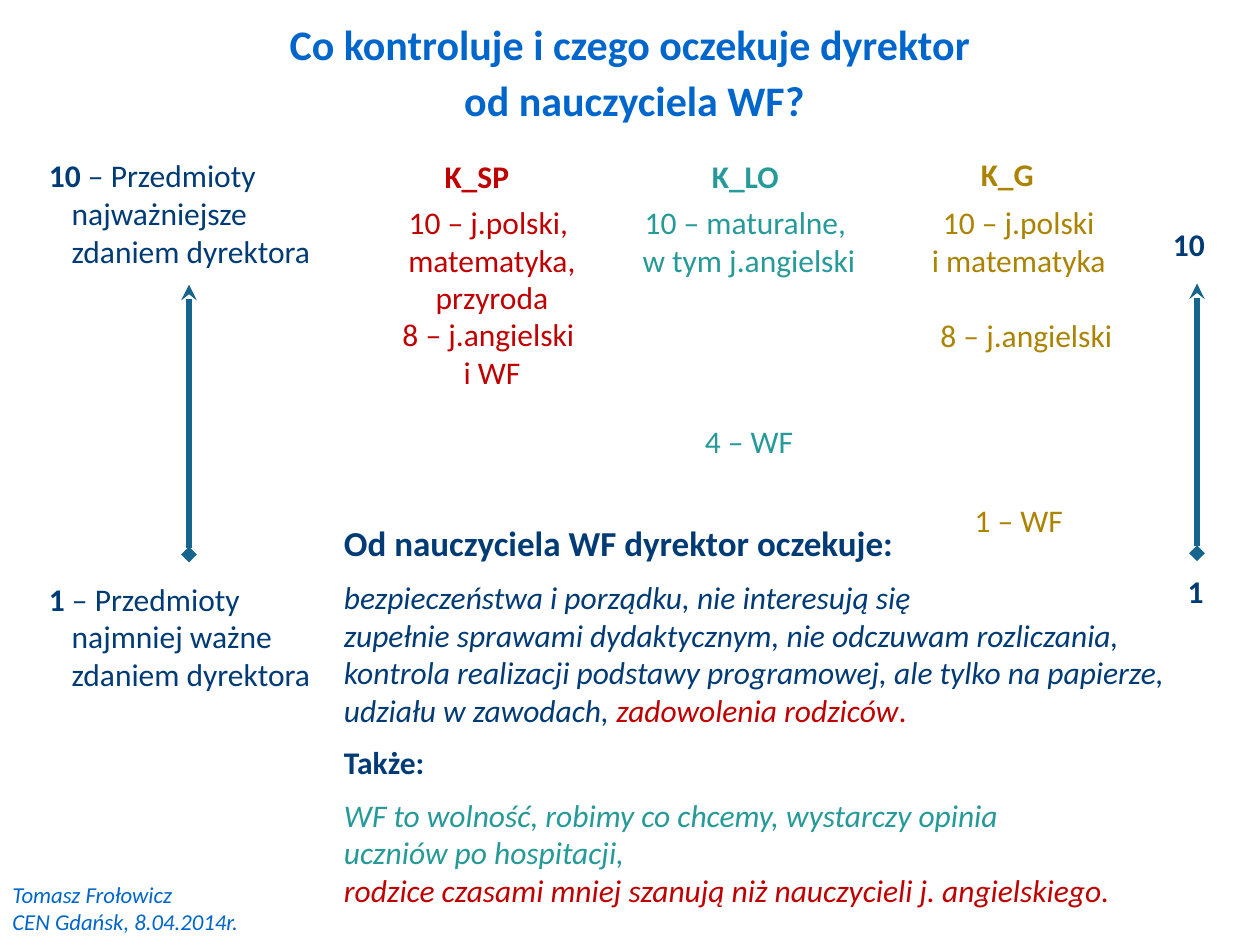
from dataclasses import dataclass

from lxml import etree
from pptx import Presentation
from pptx.dml.color import RGBColor
from pptx.enum.shapes import MSO_CONNECTOR
from pptx.enum.text import MSO_AUTO_SIZE, PP_ALIGN
from pptx.oxml.ns import qn
from pptx.util import Pt

LEFT, MID = PP_ALIGN.LEFT, PP_ALIGN.CENTER
GROW = MSO_AUTO_SIZE.SHAPE_TO_FIT_TEXT
LINE = MSO_CONNECTOR.STRAIGHT

BLUE = RGBColor(0x00, 0x66, 0xCC)
NAVY = RGBColor(0x00, 0x3B, 0x76)
STEEL = RGBColor(0x15, 0x65, 0x8D)
TEAL = RGBColor(0x26, 0x99, 0x99)
RED = RGBColor(0xC0, 0x00, 0x00)
GOLD = RGBColor(0xAC, 0x83, 0x00)

FONT = "Calibri"
HANG = 13
WIDE = 159


@dataclass(frozen=True)
class Run:
    text: str
    color: RGBColor
    size: float = 18
    bold: bool = False
    slant: bool = False


@dataclass(frozen=True)
class Para:
    runs: tuple[Run, ...]
    align: PP_ALIGN = LEFT
    hang: float = 0
    before: float = 0
    after: float = 0


@dataclass(frozen=True)
class Box:
    left: float
    top: float
    width: float
    height: float
    paras: tuple[Para, ...]
    inset: float = 7.2


@dataclass(frozen=True)
class Arrow:
    left: float
    top: float
    end: float


def add_run(para, run: Run) -> None:
    for at, line in enumerate(run.text.split("\n")):
        if at:
            para.add_line_break()
        item = para.add_run()
        item.text = line
        font = item.font
        font.name = FONT
        font.size = Pt(run.size)
        font.bold = run.bold
        font.italic = run.slant
        font.color.rgb = run.color


def add_box(slide, box: Box) -> None:
    shape = slide.shapes.add_textbox(
        Pt(box.left), Pt(box.top), Pt(box.width), Pt(box.height))
    frame = shape.text_frame
    frame.word_wrap = True
    frame.auto_size = GROW
    frame.margin_left = frame.margin_right = Pt(box.inset)
    frame.margin_top = frame.margin_bottom = Pt(3.6)
    for at, part in enumerate(box.paras):
        para = frame.add_paragraph() if at else frame.paragraphs[0]
        para.alignment = part.align
        para.space_before = Pt(part.before)
        para.space_after = Pt(part.after)
        if part.hang:
            props = para._p.get_or_add_pPr()
            props.set("marL", str(Pt(part.hang)))
            props.set("indent", str(-Pt(part.hang)))
        for run in part.runs:
            add_run(para, run)


def add_arrow(slide, arrow: Arrow) -> None:
    item = slide.shapes.add_connector(
        LINE, Pt(arrow.left), Pt(arrow.top), Pt(arrow.left), Pt(arrow.end))
    item.line.color.rgb = STEEL
    item.line.width = Pt(3)
    edge = item.line._get_or_add_ln()
    for tag, kind in (("a:headEnd", "stealth"), ("a:tailEnd", "diamond")):
        etree.SubElement(edge, qn(tag)).set("type", kind)
    etree.SubElement(item._element.spPr, qn("a:effectLst"))


def label(left: float, top: float, width: float, height: float, text: str,
          color: RGBColor, bold: bool = False, hang: float = 0) -> Box:
    run = Run(text, color, bold=bold)
    return Box(left, top, width, height, (Para((run,), MID, hang),))


def title(top: float, text: str) -> Box:
    run = Run(text, BLUE, 24, True)
    return Box(23.8, top, 677.5, 36, (Para((run,), MID),), 6.5)


def scale(top: float, mark: str, text: str) -> Box:
    runs = (Run(mark, NAVY, bold=True), Run(text, NAVY))
    return Box(20.9, top, 185, 72.7, (Para(runs, hang=HANG),))


BOXES = (
    title(7.2, "Co kontroluje i czego oczekuje dyrektor "),
    title(38.9, "od nauczyciela WF?"),
    scale(85.7, "10", " – Przedmioty najważniejsze zdaniem dyrektora"),
    scale(327.6, "1", " – Przedmioty najmniej ważne zdaniem dyrektora"),
    label(379.4, 86.4, 93, 29, "K_LO", TEAL, True),
    label(348.5, 112.3, WIDE, 51, "10 – maturalne, \nw tym j.angielski", TEAL),
    label(348.5, 237.6, WIDE, 29, "4 – WF", TEAL),
    label(216, 86.4, 113, 29, "K_SP", RED, True),
    label(201.6, 112.3, WIDE, 72.7,
          "10 – j.polski, \nmatematyka, przyroda", RED),
    label(201.6, 176.4, WIDE, 51, "8 – j.angielski \ni WF", RED),
    label(519.1, 85, 113, 29, "K_G", GOLD, True),
    label(502.6, 112.3, WIDE, 51, "10 – j.polski\ni matematyka", GOLD),
    label(509, 177.1, WIDE, 29, "8 – j.angielski ", GOLD),
    label(502.6, 283, WIDE, 29, "1 – WF", GOLD),
    label(653.8, 125.3, 51, 29, "10", NAVY, True, HANG),
    label(660.2, 323.3, 46, 29, "1", NAVY, True, HANG),
    Box(0, 499.7, 144.7, 40.3, (
        Para((Run("Tomasz Frołowicz", BLUE, 13, slant=True),)),
        Para((Run("CEN Gdańsk, 8.04.2014r.", BLUE, 13, slant=True),)),
    )),
    Box(190.1, 294.5, 529.9, 230.4, (
        Para((Run("Od nauczyciela WF dyrektor oczekuje:", NAVY, 20, True),),
             after=8.2),
        Para((
            Run("bezpieczeństwa i porządku, nie interesują się \n"
                "zupełnie sprawami dydaktycznym, nie odczuwam rozliczania, \n"
                "kontrola realizacji podstawy programowej, "
                "ale tylko na papierze, \n"
                "udziału w zawodach, ", NAVY, slant=True),
            Run("zadowolenia rodziców", RED, slant=True),
            Run(".", RED),
        )),
        Para((Run("Także:", NAVY, bold=True),), before=8.2, after=8.2),
        Para((Run("WF to wolność, robimy co chcemy, wystarczy opinia \n"
                  "uczniów po hospitacji,", TEAL, slant=True),)),
        Para((Run("rodzice czasami mniej szanują niż nauczycieli "
                  "j. angielskiego.", RED, slant=True),)),
    ), 6.5),
)

ARROWS = (Arrow(108, 162.7, 316.8), Arrow(684, 162, 316.1))


def main() -> None:
    deck = Presentation()
    deck.slide_width, deck.slide_height = Pt(720), Pt(540)
    slide = deck.slides.add_slide(deck.slide_layouts[6])
    for arrow in ARROWS:
        add_arrow(slide, arrow)
    for box in BOXES:
        add_box(slide, box)
    deck.save("out.pptx")


if __name__ == "__main__":
    main()
